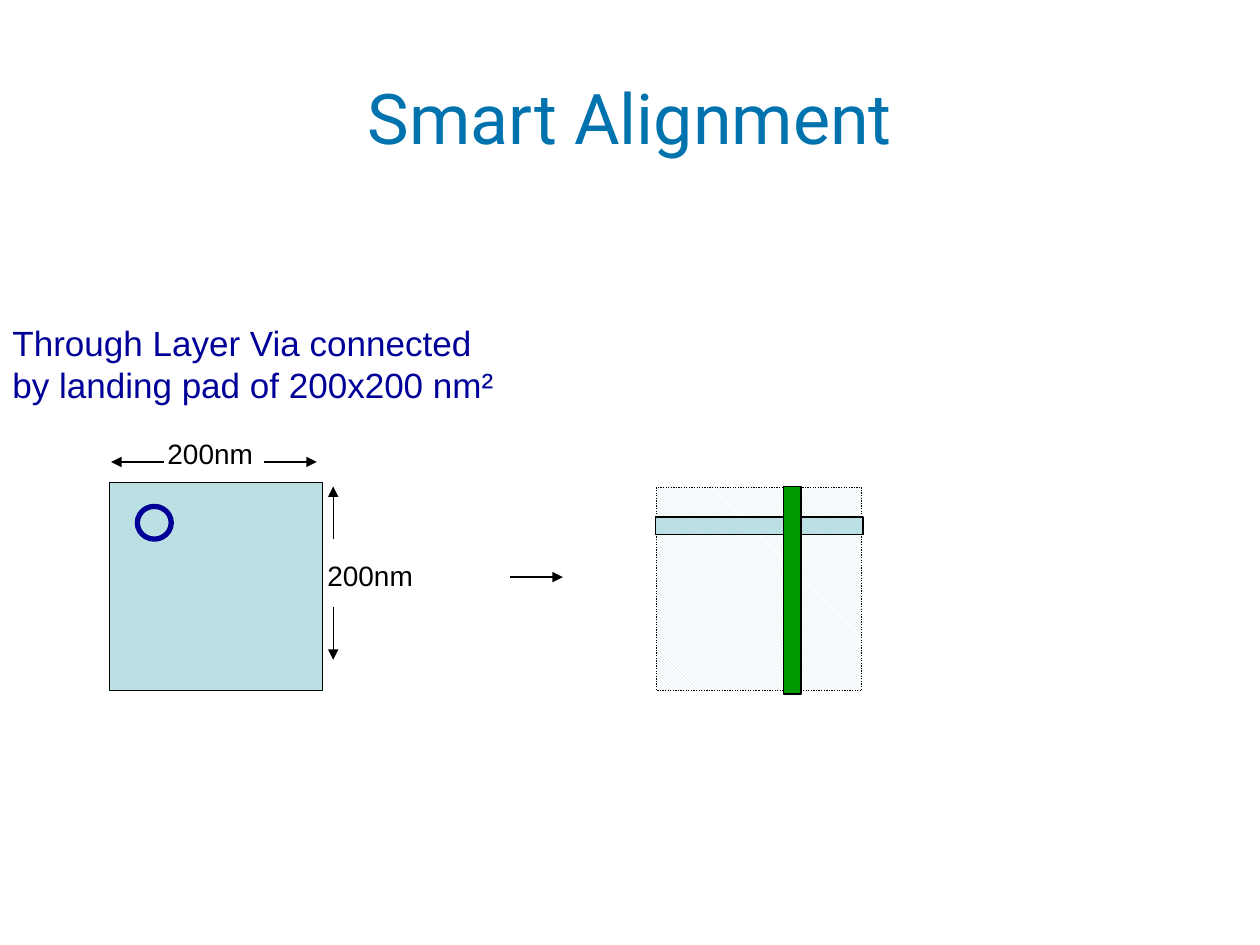
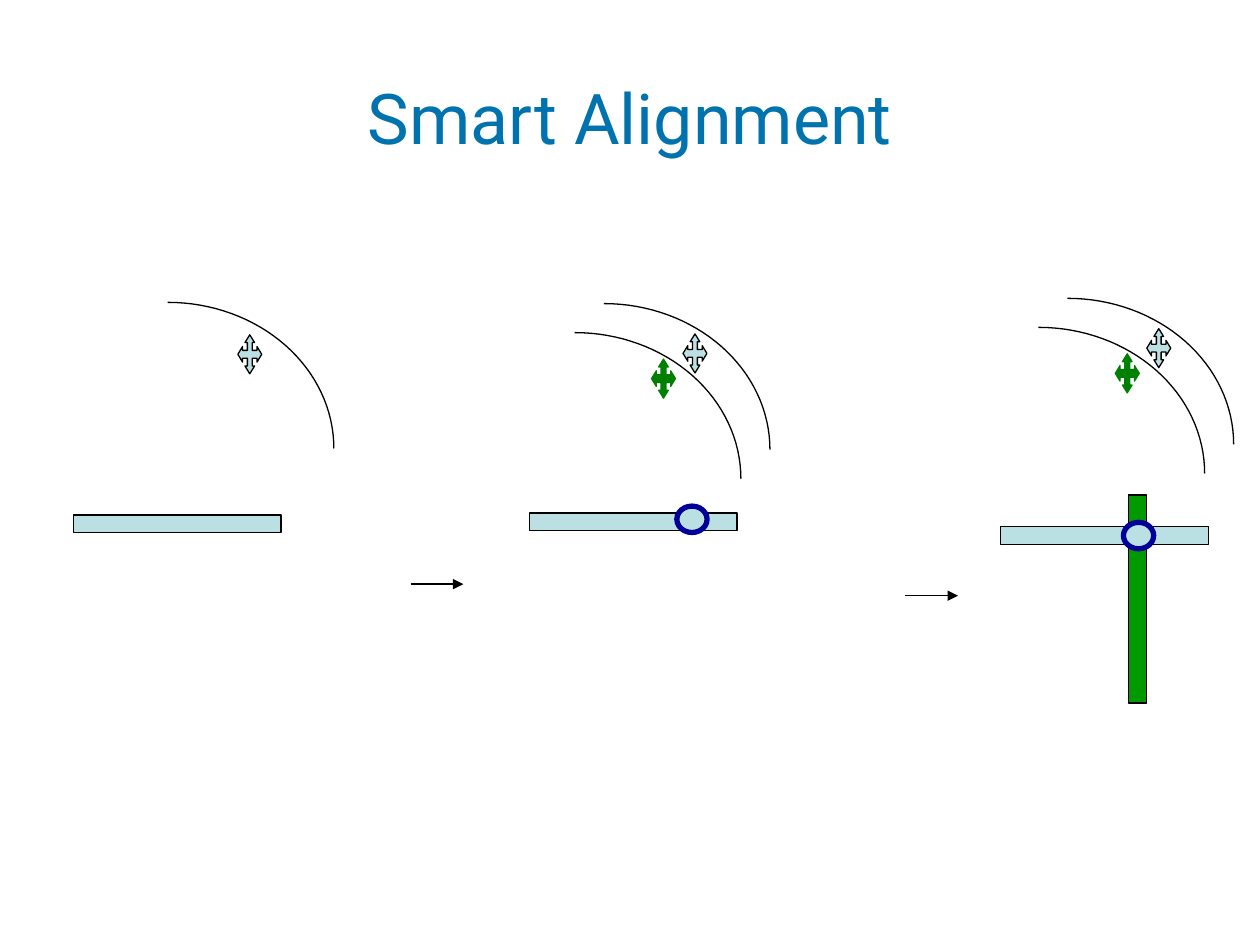
from math import cos, pi, sin

from lxml.etree import SubElement
from pptx import Presentation
from pptx.dml.color import RGBColor
from pptx.enum.dml import MSO_LINE, MSO_PATTERN
from pptx.enum.shapes import MSO_CONNECTOR, MSO_SHAPE
from pptx.enum.text import MSO_ANCHOR, PP_ALIGN
from pptx.oxml.ns import qn
from pptx.util import Pt

COLORS = {
    "title": "0073AE",
    "navy": "000099",
    "black": "000000",
    "white": "FFFFFF",
    "pale": "BBE0E3",
    "green": "009900",
    "dark_green": "008000",
}
STRIP_WIDTH, STRIP_HEIGHT = 118.8, 10.1
ARROW_LENGTH = 30
EDGE_WIDTH, EDGE_HEIGHT = 95, 83.5
MARK_WIDTH, MARK_HEIGHT = 13.7, 22.3
EDGE_SHIFT = 16.6
QUARTER_STEPS = 32


def color(name):
    return RGBColor.from_string(COLORS[name])


def cross_outline():
    """Return a four-way arrow in a unit square: one arm, turned four times."""
    arm = [(0.4, 0.4), (0.4, 0.2), (0.3, 0.2), (0.5, 0), (0.7, 0.2), (0.6, 0.2)]
    outline = []
    for _ in range(4):
        outline += arm
        arm = [(1 - y, x) for x, y in arm]
    return outline


def quarter_outline():
    """Return the upper right quarter of an ellipse in a unit square."""
    angles = [pi / 2 * step / QUARTER_STEPS for step in range(QUARTER_STEPS + 1)]
    return [(sin(angle), 1 - cos(angle)) for angle in angles]


class Deck:
    def __init__(self):
        self.presentation = Presentation()
        self.presentation.slide_width = Pt(720)
        self.presentation.slide_height = Pt(540)
        self.slide = None

    def add_slide(self, title):
        layout = self.presentation.slide_layouts[6]
        self.slide = self.presentation.slides.add_slide(layout)
        self.text(title, 36, 21.6, 648, 90, size=40, font="Roboto", ink="title",
                  align=PP_ALIGN.CENTER, anchor=MSO_ANCHOR.MIDDLE)

    def text(self, text, left, top, width, height, size=16, font="Arial",
             ink="black", align=PP_ALIGN.LEFT, anchor=MSO_ANCHOR.TOP, wrap=True):
        box = self.slide.shapes.add_textbox(Pt(left), Pt(top), Pt(width), Pt(height))
        frame = box.text_frame
        frame.word_wrap = wrap
        frame.vertical_anchor = anchor
        paragraph = frame.paragraphs[0]
        paragraph.text = text
        paragraph.alignment = align
        paragraph.font.size = Pt(size)
        paragraph.font.name = font
        paragraph.font.color.rgb = color(ink)

    def paint(self, shape, fill, line="black", weight=0.75):
        shape.shadow.inherit = False
        if fill:
            shape.fill.solid()
            shape.fill.fore_color.rgb = color(fill)
        else:
            shape.fill.background()
        shape.line.color.rgb = color(line)
        shape.line.width = Pt(weight)
        return shape

    def preset(self, kind, left, top, width, height, fill="pale", **style):
        shape = self.slide.shapes.add_shape(
            kind, Pt(left), Pt(top), Pt(width), Pt(height))
        return self.paint(shape, fill, **style)

    def strip(self, left, top, fill="pale", rotation=0):
        strip = self.preset(MSO_SHAPE.RECTANGLE, left, top,
                            STRIP_WIDTH, STRIP_HEIGHT, fill)
        strip.rotation = rotation
        return strip

    def via(self, left, top, width=17.3, height=15.1):
        return self.preset(MSO_SHAPE.OVAL, left, top, width, height,
                           line="navy", weight=3)

    def hatched_area(self, left, top, width, height):
        area = self.preset(MSO_SHAPE.RECTANGLE, left, top, width, height)
        area.fill.patterned()
        area.fill.pattern = MSO_PATTERN.LIGHT_DOWNWARD_DIAGONAL
        area.fill.fore_color.rgb = color("pale")
        area.fill.back_color.rgb = color("white")
        area.line.dash_style = MSO_LINE.ROUND_DOT

    def arrow(self, x, y, across=1, down=0):
        """Draw an arrow from (x, y) in the direction (across, down)."""
        connector = self.slide.shapes.add_connector(
            MSO_CONNECTOR.STRAIGHT, Pt(x), Pt(y),
            Pt(x + across * ARROW_LENGTH), Pt(y + down * ARROW_LENGTH))
        connector.line.color.rgb = color("black")
        connector.line.width = Pt(0.75)
        line = connector.line._get_or_add_ln()
        SubElement(line, qn("a:tailEnd"), type="triangle")
        SubElement(connector._element.spPr, qn("a:effectLst"))

    def outline(self, points, left, top, width, height, fill=None, line="black"):
        """Draw a unit-square outline in a box; only a filled one is closed."""
        placed = [(Pt(left + x * width), Pt(top + y * height)) for x, y in points]
        builder = self.slide.shapes.build_freeform(*placed[0])
        builder.add_line_segments(placed[1:], close=fill is not None)
        return self.paint(builder.convert_to_shape(), fill, line)

    def wafer_edge(self, left, top):
        return self.outline(quarter_outline(), left, top, EDGE_WIDTH, EDGE_HEIGHT)

    def alignment_mark(self, left, top, fill="pale", line="black"):
        return self.outline(cross_outline(), left, top, MARK_WIDTH, MARK_HEIGHT,
                            fill, line)

    def group(self, *shapes):
        self.slide.shapes.add_group_shape(shapes)

    def stacked_wafers(self, left, top):
        """Draw two wafer edges with their marks; (left, top) is the upper edge."""
        self.group(
            self.wafer_edge(left, top),
            self.wafer_edge(left - EDGE_SHIFT, top + EDGE_SHIFT),
            self.alignment_mark(left + 27.3, top + 31.7, "dark_green", "dark_green"),
            self.alignment_mark(left + 45.3, top + 17.3),
        )


def add_landing_pad_slide(deck):
    deck.add_slide("Smart Alignment")
    deck.preset(MSO_SHAPE.RECTANGLE, 62.6, 275.8, 121.7, 118.8)
    deck.via(78.5, 289.4, 19.4, 18.7)
    deck.arrow(151, 264)
    deck.arrow(93.5, 264, across=-1)
    deck.arrow(291.6, 329.8)
    deck.arrow(190.4, 308, across=0, down=-1)
    deck.arrow(190.4, 347, across=0, down=1)
    for left, top in ((180, 315.4), (88.6, 246.2)):
        deck.text("200nm", left, top, 63.4, 26.6, wrap=False)
    deck.text("Through Layer Via connected by landing pad of 200x200 nm²",
              0, 180, 296.6, 55.4, size=20, ink="navy")
    deck.hatched_area(375.1, 278.6, 117.4, 115.9)
    deck.strip(374.4, 295.4)
    deck.strip(393.3, 332.2, "green", rotation=270)


def add_wafer_steps_slide(deck):
    deck.add_slide("Smart Alignment")
    deck.strip(41.8, 294.3)
    deck.strip(571.7, 301)
    deck.strip(590.6, 337.2, "green", rotation=270)
    deck.group(deck.strip(302.4, 293.2), deck.via(386.8, 289.2))
    deck.via(642, 298.5)
    deck.arrow(234.8, 333.8)
    deck.arrow(517.4, 340.4)
    deck.group(deck.wafer_edge(95.8, 172.8), deck.alignment_mark(135.9, 191.3))
    deck.stacked_wafers(345, 173.5)
    deck.stacked_wafers(610, 170.5)


def main():
    deck = Deck()
    add_landing_pad_slide(deck)
    add_wafer_steps_slide(deck)
    deck.presentation.save("out.pptx")


if __name__ == "__main__":
    main()
